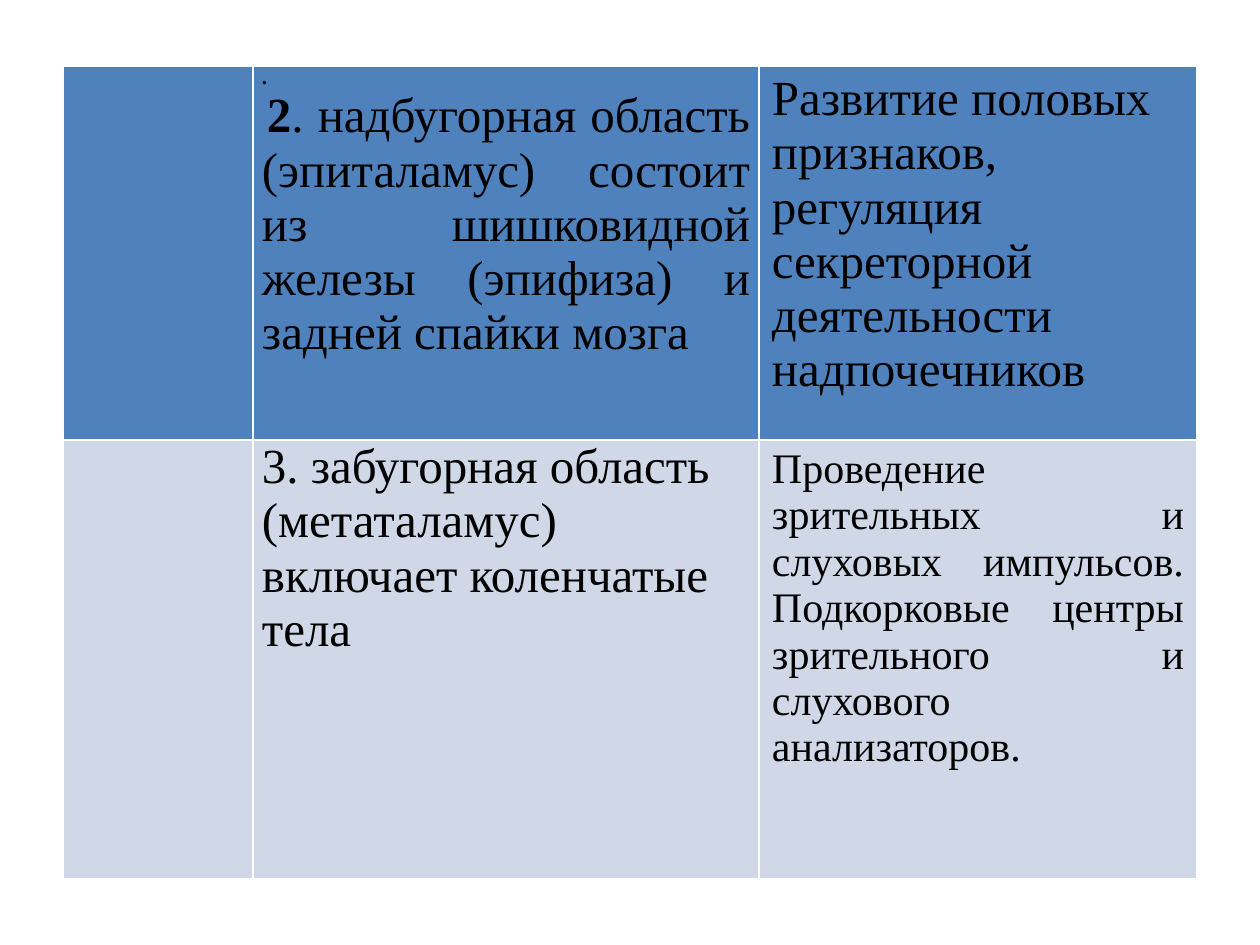
from dataclasses import dataclass

from pptx import Presentation
from pptx.dml.color import RGBColor
from pptx.enum.text import PP_ALIGN
from pptx.util import Pt

SCALE = 914400 / 126
FONT = "Times New Roman"
BLACK = "000000"


def px(n: int) -> int:
    return round(n * SCALE)


def color(code: str) -> RGBColor:
    return RGBColor.from_string(code)


@dataclass
class Para:
    text: str
    size: int = 28
    align: PP_ALIGN = PP_ALIGN.LEFT
    lead: str = ""  # bold opening of the paragraph
    indent: int = 0


@dataclass
class Entry:
    paras: tuple = ()
    side: int = 13
    top: int = 6


COLS = (190, 506, 438)
ROWS = (374, 439)
FILLS = ("4F81BD", "D0D8E8")
JUST = PP_ALIGN.JUSTIFY

GRID = (
    (
        Entry(),
        Entry((
            Para("", 12, JUST, lead="."),
            Para(". надбугорная область (эпиталамус) состоит из шишковидной "
                 "железы (эпифиза) и задней спайки мозга",
                 align=JUST, lead="2", indent=5),
        ), side=9, top=0),
        Entry((Para("Развитие половых признаков, регуляция секреторной "
                    "деятельности надпочечников"),)),
    ),
    (
        Entry(),
        Entry((Para("3. забугорная область (метаталамус) включает "
                    "коленчатые тела"),), side=9, top=0),
        Entry((Para("Проведение зрительных и слуховых импульсов. Подкорковые "
                    "центры зрительного и слухового анализаторов.",
                    24, JUST),)),
    ),
)


def write(par, item: Para) -> None:
    par.alignment = item.align
    font = par.font
    font.name, font.size = FONT, Pt(item.size)
    font.color.rgb = color(BLACK)
    if item.indent:
        par._p.get_or_add_pPr().set("indent", str(px(item.indent)))
    for text, bold in ((item.lead, True), (item.text, False)):
        if text:
            run = par.add_run()
            run.text, run.font.bold = text, bold


def fill(cell, entry: Entry, shade: str) -> None:
    cell.fill.solid()
    cell.fill.fore_color.rgb = color(shade)
    cell.margin_left = cell.margin_right = px(entry.side)
    cell.margin_top = cell.margin_bottom = px(entry.top)
    frame = cell.text_frame
    for i, item in enumerate(entry.paras):
        write(frame.add_paragraph() if i else frame.paragraphs[0], item)


def main() -> None:
    deck = Presentation()
    deck.slide_width, deck.slide_height = px(1260), px(945)
    slide = deck.slides.add_slide(deck.slide_layouts[6])
    table = slide.shapes.add_table(
        len(ROWS), len(COLS), px(63), px(66), px(sum(COLS)), px(sum(ROWS))
    ).table
    for col, width in zip(table.columns, COLS):
        col.width = px(width)
    for row, height, entries, shade in zip(table.rows, ROWS, GRID, FILLS):
        row.height = px(height)
        for cell, entry in zip(row.cells, entries):
            fill(cell, entry, shade)
    deck.save("out.pptx")


if __name__ == "__main__":
    main()
